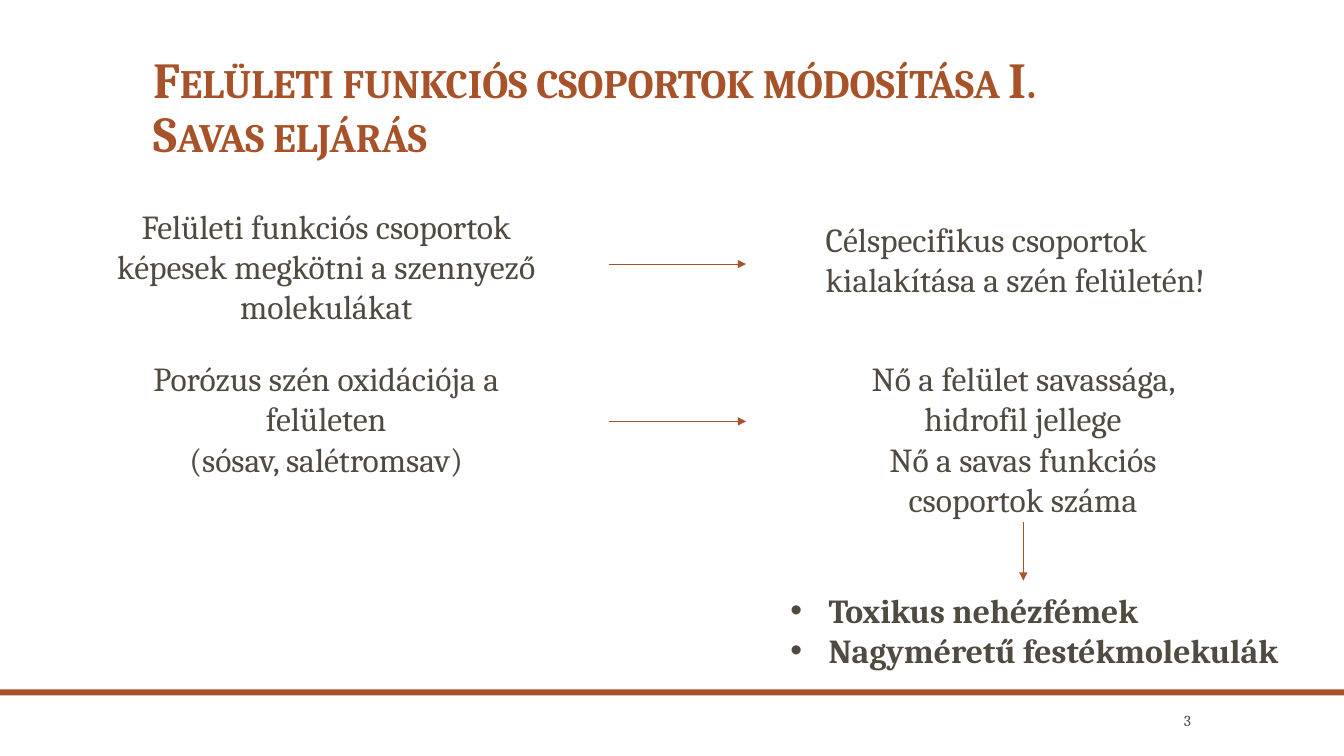
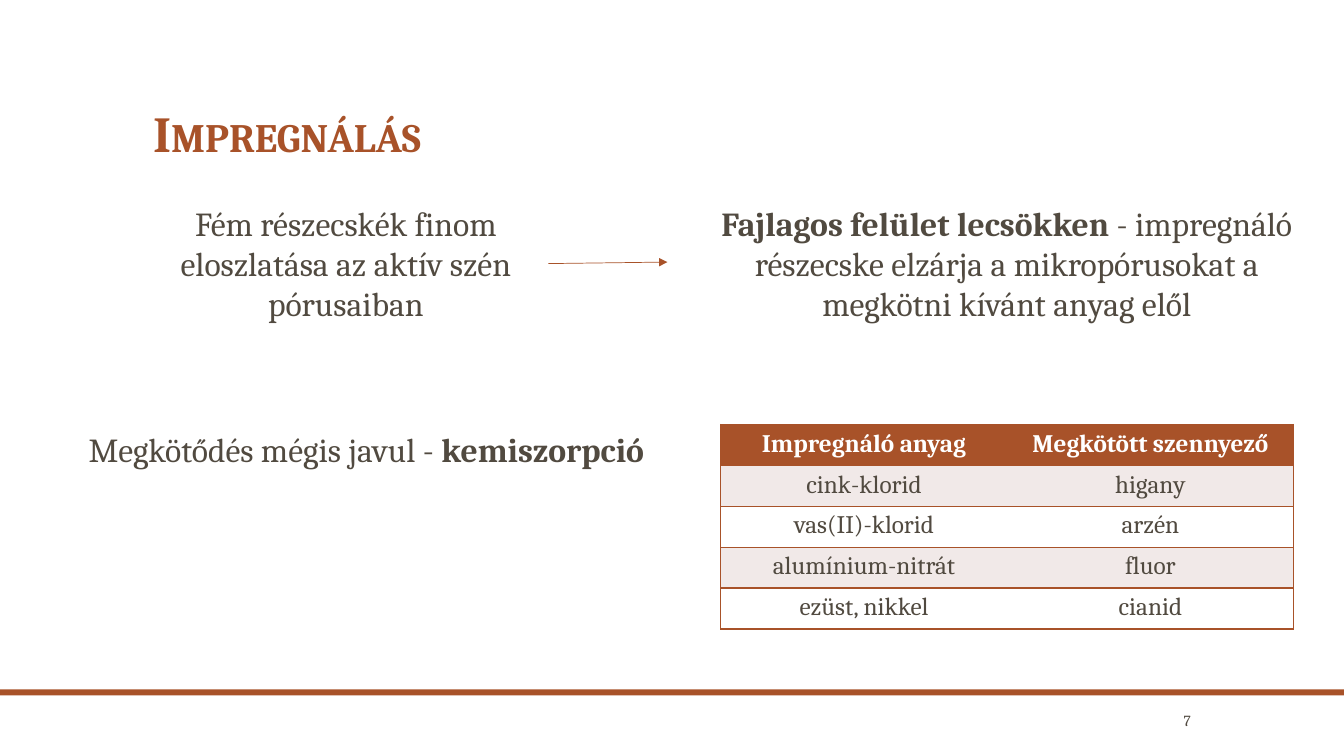
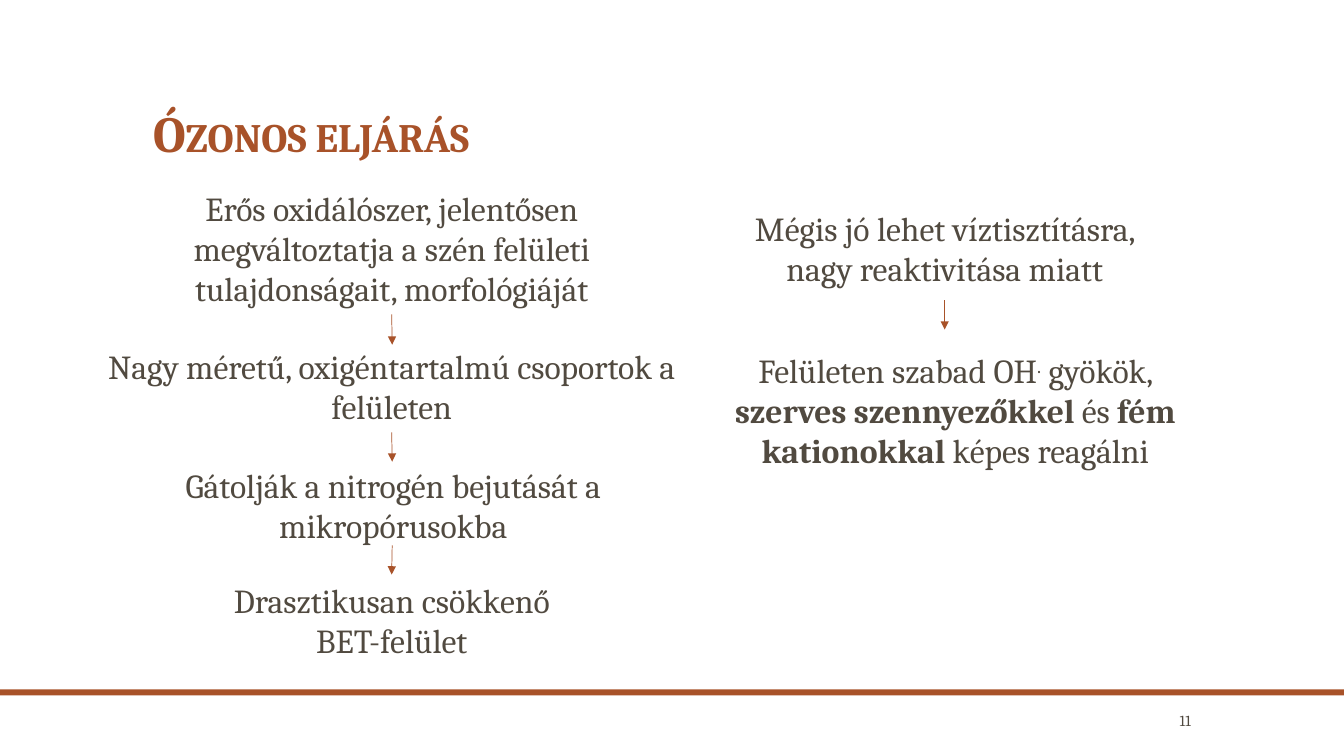
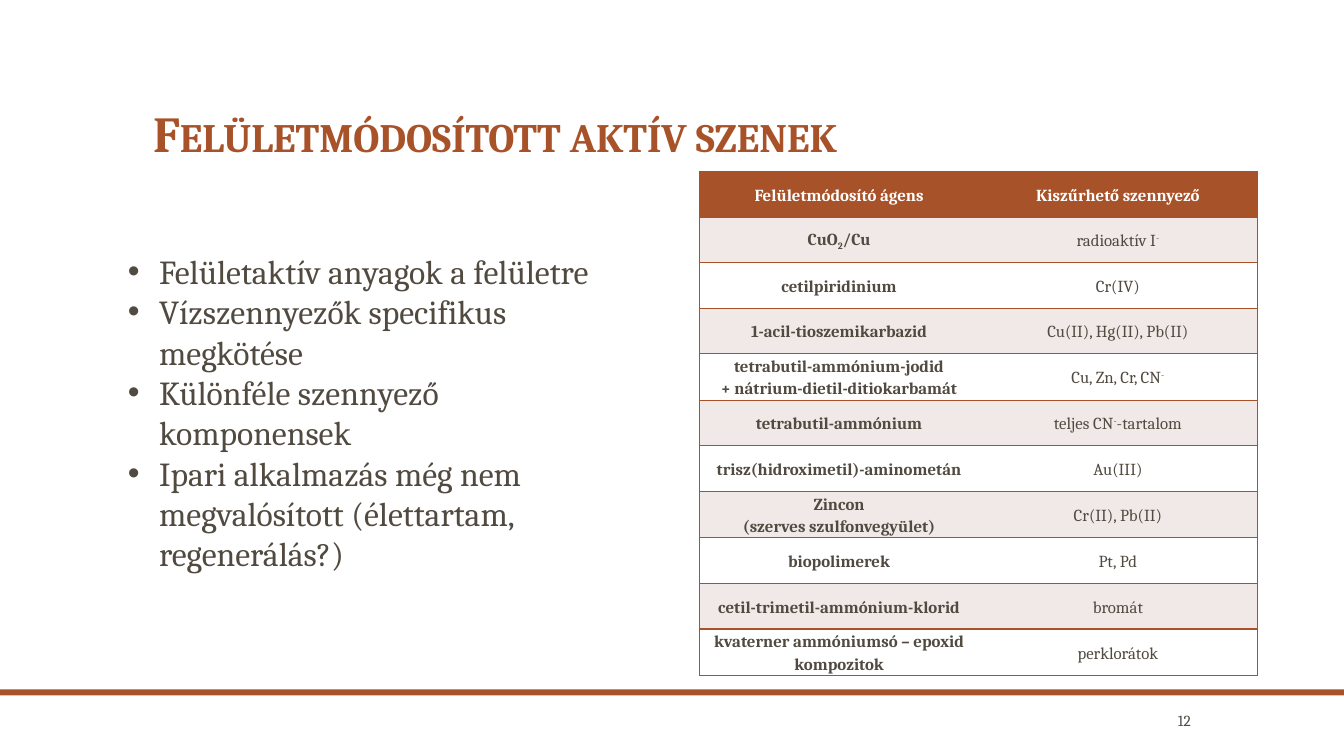
from dataclasses import dataclass

from lxml import etree
from pptx import Presentation
from pptx.dml.color import RGBColor
from pptx.enum.shapes import MSO_CONNECTOR, MSO_SHAPE
from pptx.enum.text import MSO_ANCHOR, PP_ALIGN
from pptx.oxml.ns import qn
from pptx.util import Inches, Pt

STRAIGHT = MSO_CONNECTOR.STRAIGHT
RECTANGLE = MSO_SHAPE.RECTANGLE
TOP, MIDDLE, BOTTOM = MSO_ANCHOR.TOP, MSO_ANCHOR.MIDDLE, MSO_ANCHOR.BOTTOM
LEFT, CENTER, RIGHT = PP_ALIGN.LEFT, PP_ALIGN.CENTER, PP_ALIGN.RIGHT
TOP_SIDE, BOTTOM_SIDE, RIGHT_SIDE = 0, 2, 3
BOLD, SUPER, SUB = "bold", "super", "sub"
BASELINES = {SUPER: "30000", SUB: "-25000"}


@dataclass(frozen=True)
class Theme:
    font: str = "Cambria"
    accent: str = "A85229"
    ink: str = "514A40"
    white: str = "FFFFFF"
    band: str = "F1E9E8"
    title: int = 36
    body: int = 24
    table: int = 18
    small_table: int = 12
    number: int = 11
    rule: float = 0.5
    border: float = 1


THEME = Theme()


def rgb(value):
    return RGBColor.from_string(value)


def add_bullet(paragraph, indent):
    properties = paragraph._p.get_or_add_pPr()
    properties.set("marL", str(Inches(indent)))
    properties.set("indent", str(-Inches(indent)))
    etree.SubElement(properties, qn("a:buFont")).set("typeface", "Arial")
    etree.SubElement(properties, qn("a:buChar")).set("char", "•")


def write(frame, paragraphs, size=THEME.body, color=THEME.ink, bold=False, align=CENTER,
          anchor=TOP, spacing=None, bullet=None, small_caps=False):
    frame.word_wrap = True
    frame.vertical_anchor = anchor
    if isinstance(paragraphs, str):
        paragraphs = [paragraphs]
    for index, runs in enumerate(paragraphs):
        paragraph = frame.paragraphs[0] if index == 0 else frame.add_paragraph()
        if bullet:
            add_bullet(paragraph, bullet)
        paragraph.alignment = align
        if spacing:
            paragraph.line_spacing = spacing
        for piece in [runs] if isinstance(runs, str) else runs:
            words, style = (piece, None) if isinstance(piece, str) else piece
            for number, line in enumerate(words.split("\n")):
                if number:
                    paragraph.add_line_break()
                run = paragraph.add_run()
                run.text = line
                run.font.name = THEME.font
                run.font.size = Pt(size)
                run.font.bold = bold or style == BOLD
                run.font.color.rgb = rgb(color)
                if style in BASELINES:
                    run._r.get_or_add_rPr().set("baseline", BASELINES[style])
                if small_caps:
                    run._r.get_or_add_rPr().set("cap", "small")


def add_text(slide, place, paragraphs, **style):
    box = slide.shapes.add_textbox(*map(Inches, place))
    write(box.text_frame, paragraphs, **style)
    return box


def add_arrow(slide, start, end, origin=None, target=None):
    arrow = slide.shapes.add_connector(STRAIGHT, *map(Inches, (*start, *end)))
    if origin:
        arrow.begin_connect(*origin)
    if target:
        arrow.end_connect(*target)
    arrow.line.color.rgb = rgb(THEME.accent)
    arrow.line.width = Pt(THEME.rule)
    etree.SubElement(arrow.line._get_or_add_ln(), qn("a:tailEnd")).set("type", "triangle")
    etree.SubElement(arrow._element.spPr, qn("a:effectLst"))


def set_borders(cell, visible_sides):
    properties = cell._tc.get_or_add_tcPr()
    for side in "LRTB":
        line = etree.SubElement(properties, qn(f"a:ln{side}"), w=str(Pt(THEME.border)))
        if side in visible_sides:
            fill = etree.SubElement(line, qn("a:solidFill"))
            etree.SubElement(fill, qn("a:srgbClr")).set("val", THEME.accent)
        else:
            etree.SubElement(line, qn("a:noFill"))


def add_grid(slide, place, rows, margins=None, bold_first=False, **style):
    table = slide.shapes.add_table(len(rows), len(rows[0]), *map(Inches, place)).table
    table.horz_banding = False
    for column in table.columns:
        column.width = Inches(place[2] / len(rows[0]))
    for row_index, row in enumerate(rows):
        table.rows[row_index].height = Inches(place[3] / len(rows))
        header = row_index == 0
        if header:
            fill = THEME.accent
        else:
            fill = THEME.band if row_index % 2 else THEME.white
        for column_index, content in enumerate(row):
            first = column_index == 0
            last = column_index == len(row) - 1
            cell = table.cell(row_index, column_index)
            set_borders(cell, "TB" + "L" * first + "R" * last)
            cell.fill.solid()
            cell.fill.fore_color.rgb = rgb(fill)
            if margins:
                side, edge = map(Inches, margins)
                cell.margin_left = cell.margin_right = side
                cell.margin_top = cell.margin_bottom = edge
            write(cell.text_frame, content, bold=header or (bold_first and first),
                  color=THEME.white if header else THEME.ink, **style)
            cell.vertical_anchor = style.get("anchor", TOP)


def new_slide(deck, title, number):
    slide = deck.slides.add_slide(deck.slide_layouts[6])
    footer_band = slide.shapes.add_shape(RECTANGLE, 0, Inches(6.84), deck.slide_width, Inches(0.06))
    footer_band.shadow.inherit = False
    footer_band.fill.solid()
    footer_band.fill.fore_color.rgb = rgb(THEME.accent)
    footer_band.line.fill.background()
    add_text(slide, (1.42, 0.42, 10.5, 1.25), title, size=THEME.title, color=THEME.accent,
             bold=True, align=LEFT, anchor=BOTTOM, spacing=0.9, small_caps=True)
    add_text(slide, (11.15, 7.02, 0.76, 0.26), str(number), size=THEME.number,
             align=RIGHT, anchor=MIDDLE)
    return slide


def acid_slide(deck):
    slide = new_slide(deck, "Felületi funkciós csoportok módosítása I.\nSavas eljárás", 3)
    add_text(slide, (0.83, 1.99, 4.81, 1.31),
             "Felületi funkciós csoportok képesek megkötni a szennyező molekulákat")
    add_text(slide, (8.09, 2.12, 4.11, 0.91),
             "Célspecifikus csoportok kialakítása a szén felületén!", align=LEFT)
    add_text(slide, (1.33, 3.5, 3.81, 1.31),
             "Porózus szén oxidációja a felületen\n(sósav, salétromsav)")
    add_text(slide, (8.09, 3.5, 4.11, 1.72),
             "Nő a felület savassága, hidrofil jellege\nNő a savas funkciós csoportok száma")
    for y in (2.62, 4.18):
        add_arrow(slide, (6.04, y), (7.4, y))
    add_arrow(slide, (10.15, 5.18), (10.15, 5.76))
    add_text(slide, (7.74, 5.8, 5.39, 0.91), ["Toxikus nehézfémek", "Nagyméretű festékmolekulák"],
             bold=True, align=LEFT, bullet=0.38)


def impregnation_slide(deck):
    slide = new_slide(deck, "Impregnálás", 7)
    particles = add_text(slide, (1.42, 1.96, 4.02, 1.31),
                         "Fém részecskék finom eloszlatása az aktív szén pórusaiban")
    add_arrow(slide, (5.43, 2.62), (6.62, 2.6), origin=(particles, RIGHT_SIDE))
    add_text(slide, (6.92, 1.96, 6.13, 1.31), [[
        ("Fajlagos felület lecsökken ", BOLD),
        "- impregnáló részecske elzárja a mikropórusokat a megkötni kívánt anyag elől"]])
    add_text(slide, (0.78, 4.21, 6.53, 0.5),
             [["Megkötődés mégis javul - ", ("kemiszorpció", BOLD)]], align=LEFT)
    add_grid(slide, (7.15, 4.21, 5.68, 2.03), [
        ("Impregnáló anyag", "Megkötött szennyező"),
        ("cink-klorid", "higany"),
        ("vas(II)-klorid", "arzén"),
        ("alumínium-nitrát", "fluor"),
        ("ezüst, nikkel", "cianid"),
    ], size=THEME.table)


def ozone_slide(deck):
    slide = new_slide(deck, "Ózonos eljárás", 11)
    oxidiser = add_text(
        slide, (1.41, 1.81, 4.95, 1.31),
        "Erős oxidálószer, jelentősen megváltoztatja a szén felületi tulajdonságait, morfológiáját")
    oxygen_groups = add_text(slide, (0.97, 3.38, 5.83, 0.91),
                             "Nagy méretű, oxigéntartalmú csoportok a felületen")
    add_text(slide, (1.74, 4.56, 4.32, 0.91), "Gátolják a nitrogén bejutását a mikropórusokba")
    surface_loss = add_text(slide, (2.19, 5.7, 3.39, 0.91), "Drasztikusan csökkenő BET-felület")
    add_text(slide, (7.21, 2.01, 4.32, 0.91),
             "Mégis jó lehet víztisztításra, nagy reaktivitása miatt")
    add_text(slide, (7.17, 3.42, 4.61, 1.72), [[
        "Felületen szabad OH", (".", SUPER), " gyökök, ", ("szerves szennyezőkkel ", BOLD),
        "és ", ("fém kationokkal ", BOLD), "képes reagálni"]])
    for x, y, origin, target in (
        (3.89, 3.13, (oxidiser, BOTTOM_SIDE), None),
        (3.89, 4.29, (oxygen_groups, BOTTOM_SIDE), None),
        (3.89, 5.41, None, (surface_loss, TOP_SIDE)),
        (9.37, 2.98, None, None),
    ):
        add_arrow(slide, (x, y), (x, y + 0.29), origin, target)


def modified_carbons_slide(deck):
    slide = new_slide(deck, "Felületmódosított aktív szenek", 12)
    add_grid(slide, (6.94, 1.7, 5.53, 4.98), [
        ("Felületmódosító ágens", "Kiszűrhető szennyező"),
        ([["CuO", ("2", SUB), "/Cu"]], [["radioaktív I", ("-", SUPER)]]),
        ("cetilpiridinium", "Cr(IV)"),
        ("1-acil-tioszemikarbazid", "Cu(II), Hg(II), Pb(II)"),
        (["tetrabutil-ammónium-jodid", "+ nátrium-dietil-ditiokarbamát"],
         [["Cu, Zn, Cr, CN", ("-", SUPER)]]),
        ("tetrabutil-ammónium", [["teljes CN", ("-", SUPER), "-tartalom"]]),
        ("trisz(hidroximetil)-aminometán", "Au(III)"),
        (["Zincon", "(szerves szulfonvegyület)"], "Cr(II), Pb(II)"),
        ("biopolimerek", "Pt, Pd"),
        ("cetil-trimetil-ammónium-klorid", "bromát"),
        ("kvaterner ammóniumsó – epoxid kompozitok", "perklorátok"),
    ], margins=(0.07, 0), bold_first=True, size=THEME.small_table, anchor=MIDDLE, spacing=1.15)
    add_text(slide, (1.17, 2.44, 4.96, 3.33), [
        "Felületaktív anyagok a felületre",
        "Vízszennyezők specifikus megkötése",
        "Különféle szennyező komponensek",
        "Ipari alkalmazás még nem megvalósított (élettartam, regenerálás?)",
    ], align=LEFT, bullet=0.31)


def main():
    deck = Presentation()
    deck.slide_width, deck.slide_height = Inches(13.33), Inches(7.5)
    for build in (acid_slide, impregnation_slide, ozone_slide, modified_carbons_slide):
        build(deck)
    deck.save("out.pptx")


if __name__ == "__main__":
    main()
